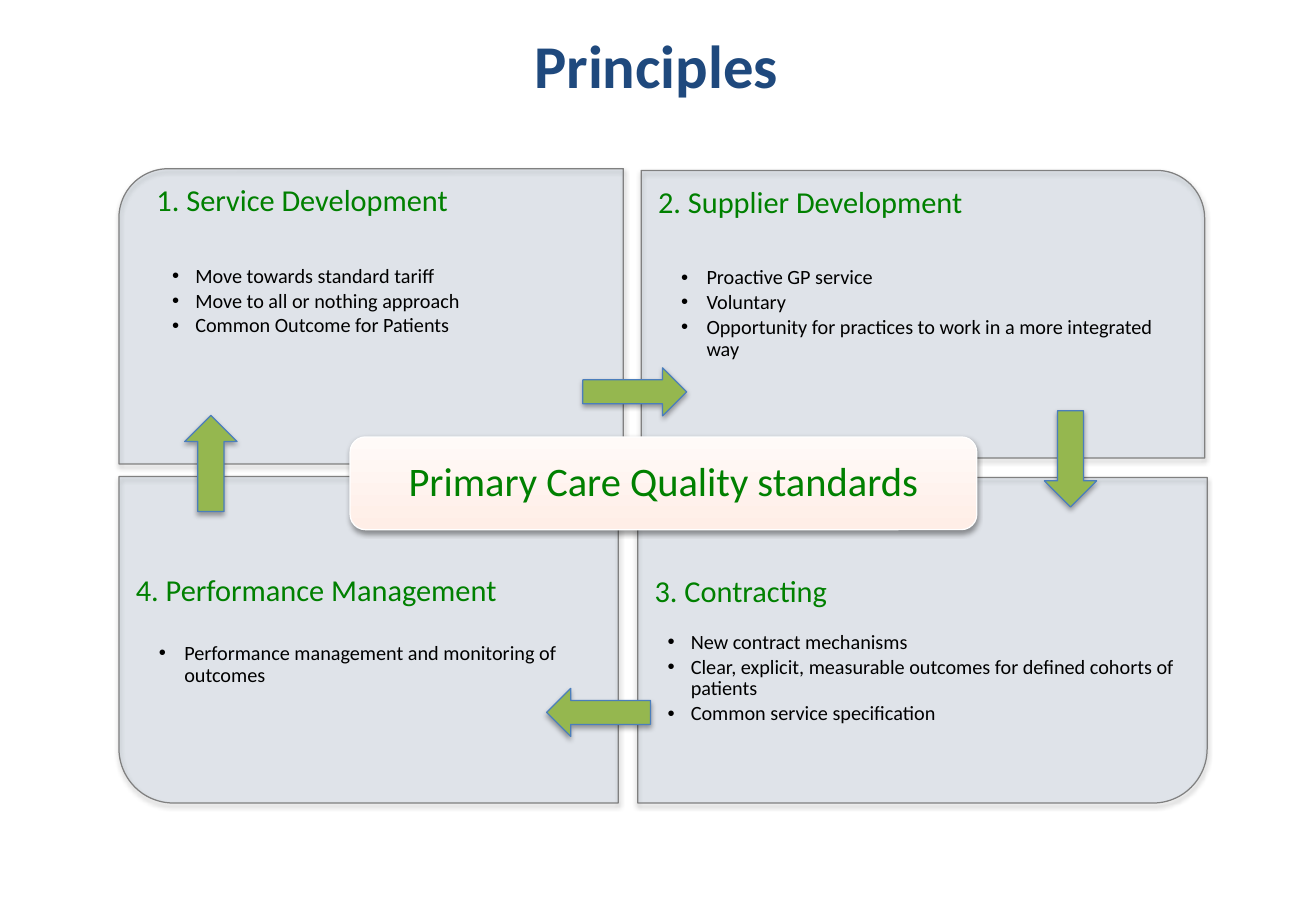
from dataclasses import dataclass

from lxml.etree import SubElement
from pptx import Presentation
from pptx.dml.color import RGBColor as Rgb
from pptx.enum.shapes import MSO_SHAPE as Shape
from pptx.enum.text import MSO_ANCHOR as Anchor, PP_ALIGN as Align
from pptx.oxml.ns import qn
from pptx.util import Pt


@dataclass(frozen=True)
class Theme:
    font: str = "Calibri"
    title_size: float = 36
    banner_size: float = 24
    heading_size: float = 18
    bullet_size: float = 12
    title: str = "1F497D"
    heading: str = "008000"
    body: str = "000000"
    panel: str = "376092"
    panel_line: str = "808080"
    panel_alpha: int = 11
    arrow: str = "95B74F"
    arrow_line: str = "4B7EBC"
    banner_bottom: str = "FFEEE7"
    banner_top: str = "FFFAF8"
    banner_line: str = "FFFFFF"
    shadow: str = "000000"


class PrinciplesPage:
    def __init__(self, deck, theme):
        self.theme = theme
        self.page = deck.slides.add_slide(deck.slide_layouts[5])

    def style(self, para, size, color, bold=False):
        para.font.name = self.theme.font
        para.font.size = Pt(size)
        para.font.bold = bold
        para.font.color.rgb = Rgb.from_string(color)

    def title(self, text, left, top, width, height):
        box = self.page.shapes.title
        box.left, box.top, box.width, box.height = map(Pt, (left, top, width, height))
        box.text_frame.text = text
        box.text_frame.vertical_anchor = Anchor.MIDDLE
        para = box.text_frame.paragraphs[0]
        para.alignment = Align.CENTER
        self.style(para, self.theme.title_size, self.theme.title, bold=True)

    def shape(self, kind, bounds, line, turn=0, shadow_alpha=38):
        """Add a shadowed shape that covers the bounds after its turn."""
        left, top, width, height = bounds
        if turn % 180:
            shift = (width - height) / 2
            left, top, width, height = left + shift, top - shift, height, width
        shape = self.page.shapes.add_shape(kind, *map(Pt, (left, top, width, height)))
        shape.rotation = turn
        shape.line.color.rgb = Rgb.from_string(line)
        shape.line.width = Pt(0.75)
        shape.shadow.inherit = False
        effects = shape._element.spPr.find(qn("a:effectLst"))
        shadow = SubElement(effects, qn("a:outerShdw"), blurRad=str(Pt(3.1)),
                            dist=str(Pt(1.7)), dir="5400000", rotWithShape="0")
        color = SubElement(shadow, qn("a:srgbClr"), val=self.theme.shadow)
        SubElement(color, qn("a:alpha"), val=str(shadow_alpha * 1000))
        return shape

    def panel(self, bounds, turn):
        panel = self.shape(Shape.ROUND_1_RECTANGLE, bounds, self.theme.panel_line, turn)
        panel.fill.solid()
        panel.fill.fore_color.rgb = Rgb.from_string(self.theme.panel)
        color = panel._element.spPr.find(qn("a:solidFill")).find(qn("a:srgbClr"))
        SubElement(color, qn("a:alpha"), val=str(self.theme.panel_alpha * 1000))

    def principle(self, bounds, heading, indent, gap, bullets, margin, hanging):
        box = self.page.shapes.add_textbox(*map(Pt, bounds))
        frame = box.text_frame
        frame.word_wrap = True
        frame.margin_left = frame.margin_right = Pt(10)
        frame.margin_top = frame.margin_bottom = Pt(10)
        para = frame.paragraphs[0]
        para.text = heading
        para.line_spacing = 0.9
        para.space_after = Pt(gap)
        para._p.get_or_add_pPr().set("marL", str(Pt(indent)))
        self.style(para, self.theme.heading_size, self.theme.heading)
        for text in bullets:
            self.bullet(frame.add_paragraph(), text, margin, hanging)

    def bullet(self, para, text, margin, hanging):
        para.text = text
        para.level = 1
        para.line_spacing = 0.9
        para.space_after = Pt(1.8)
        props = para._p.get_or_add_pPr()
        props.set("marL", str(Pt(margin)))
        props.set("indent", str(-Pt(hanging)))
        SubElement(props, qn("a:buFont"), typeface="Arial")
        SubElement(props, qn("a:buChar"), char="•")
        self.style(para, self.theme.bullet_size, self.theme.body)

    def banner(self, text, bounds):
        banner = self.shape(Shape.ROUNDED_RECTANGLE, bounds, self.theme.banner_line)
        banner.fill.gradient()
        banner.fill.gradient_angle = 90
        colors = (self.theme.banner_bottom, self.theme.banner_top)
        for stop, color in zip(banner.fill.gradient_stops, colors):
            stop.color.rgb = Rgb.from_string(color)
        frame = banner.text_frame
        frame.word_wrap = True
        frame.vertical_anchor = Anchor.MIDDLE
        para = frame.paragraphs[0]
        para.text = text
        para.alignment = Align.CENTER
        para.line_spacing = 0.9
        self.style(para, self.theme.banner_size, self.theme.heading)

    def arrow(self, bounds, turn):
        arrow = self.shape(Shape.RIGHT_ARROW, bounds, self.theme.arrow_line, turn, 35)
        arrow.fill.solid()
        arrow.fill.fore_color.rgb = Rgb.from_string(self.theme.arrow)


# panel bounds, turn, text top, heading, its indent, gap below it,
# bullets, bullet margin, bullet hanging
PRINCIPLES = [
    ((70.5, 100, 299, 175), 270, 100, "1. Service Development", 12.25, 28,
     ["Move towards standard tariff", "Move to all or nothing approach",
      "Common Outcome for Patients"], 35.25, 13.75),
    ((380, 101, 334, 170.5), 0, 101, "2. Supplier Development", 0, 28,
     ["Proactive GP service", "Voluntary",
      "Opportunity for practices to work in a more integrated way"], 28.75, 15),
    ((70.5, 282.5, 296, 193.5), 180, 331, "4. Performance Management", 0, 20.75,
     ["Performance management and monitoring of outcomes"], 28.75, 15),
    ((378, 283, 337.5, 193), 90, 331.5, "3. Contracting", 0, 13.5,
     ["New contract mechanisms",
      "Clear, explicit, measurable outcomes for defined cohorts of patients",
      "Common service specification"], 21.5, 13.75),
]

ARROWS = [
    ((345.5, 218, 61.5, 28.5), 0),
    ((619, 243.5, 31, 57), 90),
    ((324, 408, 61.5, 28.5), 180),
    ((109.5, 246.25, 31, 57), 270),
]


def main():
    deck = Presentation()
    deck.slide_width, deck.slide_height = Pt(780), Pt(540)
    page = PrinciplesPage(deck, Theme())
    page.title("Principles", 38, -7, 702, 90)
    for bounds, turn, text_top, *content in PRINCIPLES:
        left, top, width, height = bounds
        page.panel(bounds, turn)
        page.principle((left, text_top, width, top + height - text_top), *content)
    page.banner("Primary Care Quality standards", (207.5, 259, 371.5, 55))
    for bounds, turn in ARROWS:
        page.arrow(bounds, turn)
    deck.save("out.pptx")


if __name__ == "__main__":
    main()
